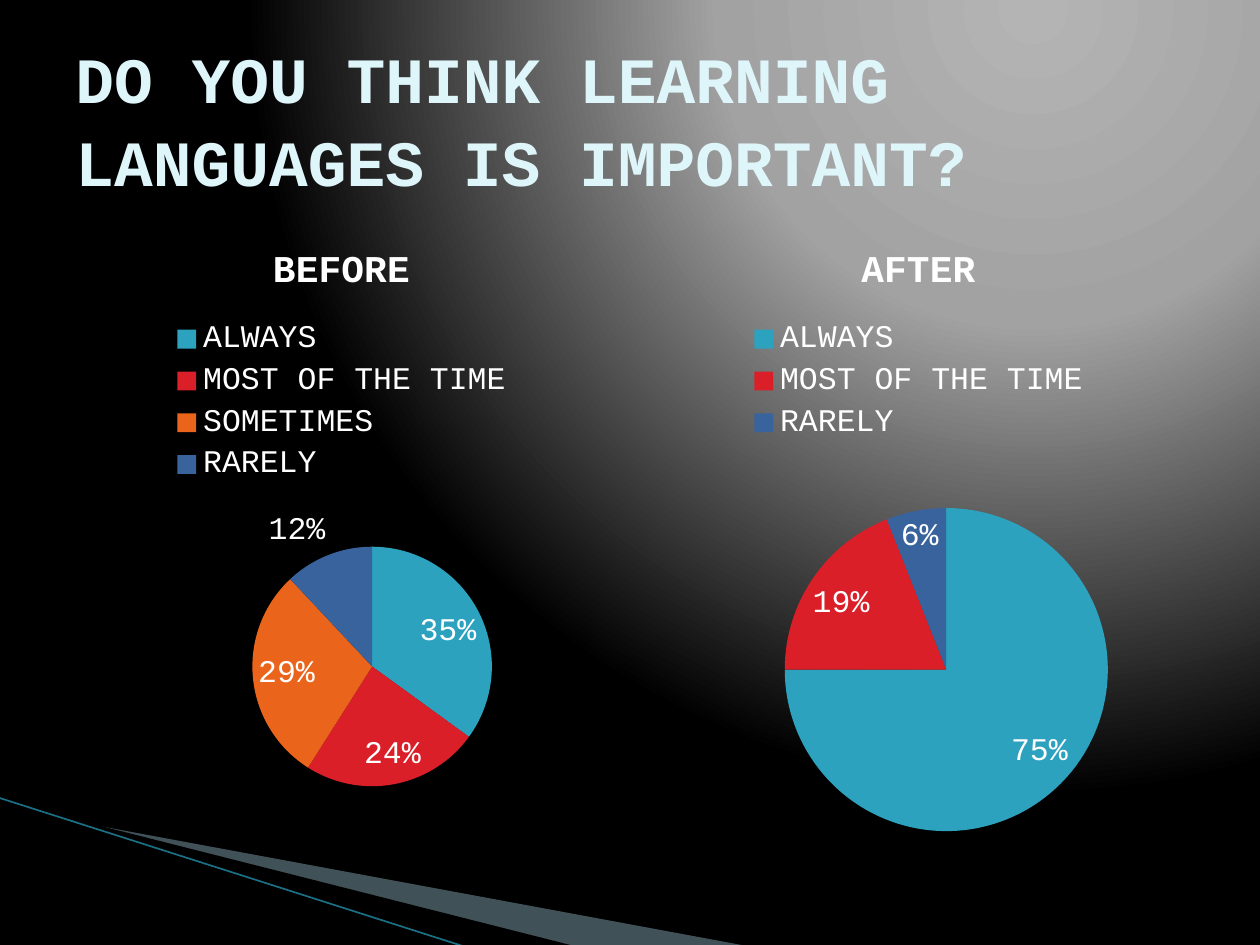
from lxml import etree
from pptx import Presentation
from pptx.chart.data import CategoryChartData
from pptx.dml.color import RGBColor
from pptx.enum import chart as charts, shapes, text
from pptx.oxml import ns
from pptx.util import Cm, Pt

COLORS = {
    "title": "DEF5FA", "text": "FFFFFF", "ribbon": "A0CBDC", "black": "000000",
    "line": "1C7085", "glow": "B4B4B4", "haze": "A2A2A2",
    "ALWAYS": "2DA2BF", "MOST OF THE TIME": "DA1F28",
    "SOMETIMES": "EB641B", "RARELY": "39639D",
}
FONT = "Courier New"
ANSWERS = ["ALWAYS", "MOST OF THE TIME", "SOMETIMES", "RARELY"]


def add_xml(parent, tag, **attributes):
    child = etree.SubElement(parent, ns.qn(tag))
    for name, value in attributes.items():
        child.set(name, str(value))
    return child


def set_font(font, size, color, bold=False):
    font.name = FONT
    font.size = Pt(size)
    font.bold = bold
    font.color.rgb = RGBColor.from_string(COLORS[color])


presentation = Presentation()
presentation.slide_width = Cm(25.4)
presentation.slide_height = Cm(19.05)
slide = presentation.slides.add_slide(presentation.slide_layouts[6])

slide.background.fill.gradient()
gradient = next(slide.element.iter(ns.qn("a:gradFill")))
for child in list(gradient):
    gradient.remove(child)
stops = add_xml(gradient, "a:gsLst")
for position, color in [(0, "glow"), (40, "haze"), (100, "black")]:
    stop = add_xml(stops, "a:gs", pos=position * 1000)
    add_xml(stop, "a:srgbClr", val=COLORS[color])
circle = add_xml(gradient, "a:path", path="circle")
add_xml(circle, "a:fillToRect", l=65000, t=0, r=0, b=98000)

ribbons = [
    ("ribbon", 40, [(1.4, 16.54), (15.11, 19.08), (11.58, 19.08), (1.4, 16.51)]),
    ("black", 100, [(1.35, 16.48), (11.61, 19.08), (9.45, 19.1), (1.37, 16.51)]),
]
for color, opacity, corners in ribbons:
    points = [(Cm(x), Cm(y)) for x, y in corners]
    builder = slide.shapes.build_freeform(*points[0])
    builder.add_line_segments(points[1:], close=True)
    shape = builder.convert_to_shape()
    shape.shadow.inherit = False
    shape.line.fill.background()
    shape.fill.solid()
    shape.fill.fore_color.rgb = RGBColor.from_string(COLORS[color])
    if opacity < 100:
        fill_color = next(shape.element.spPr.iter(ns.qn("a:srgbClr")))
        add_xml(fill_color, "a:alpha", val=opacity * 1000)

line = slide.shapes.add_connector(
    shapes.MSO_CONNECTOR.STRAIGHT, Cm(-0.03), Cm(16.08), Cm(9.42), Cm(19.1))
line.line.color.rgb = RGBColor.from_string(COLORS["line"])
line.line.width = Pt(0.95)
add_xml(line.element.spPr, "a:effectLst")

title = slide.shapes.add_textbox(Cm(1.27), Cm(0.76), Cm(22.86), Cm(3.18))
title.text_frame.word_wrap = True
title.text_frame.vertical_anchor = text.MSO_ANCHOR.MIDDLE
paragraph = title.text_frame.paragraphs[0]
paragraph.text = "DO YOU THINK LEARNING LANGUAGES IS IMPORTANT?"
paragraph.line_spacing = 1.07
set_font(paragraph.font, 36.9, "title", bold=True)

surveys = [
    ("AFTER", 12.9, [75, 19, None, 6], (0.26, 0.46, 0.58, 0.52)),
    ("BEFORE", 1.27, [35, 24, 29, 12], (0.34, 0.52, 0.43, 0.39)),
]
for name, left, values, pie_area in surveys:
    data = CategoryChartData()
    data.categories = ANSWERS
    data.add_series("Series 1", values)
    chart = slide.shapes.add_chart(
        charts.XL_CHART_TYPE.PIE, Cm(left), Cm(4.45), Cm(11.23), Cm(12.57), data).chart
    set_font(chart.font, 18, "text")

    chart.has_title = True
    chart.chart_title.include_in_layout = False
    heading = chart.chart_title.text_frame.paragraphs[0]
    heading.text = name
    set_font(heading.font, 21.6, "text", bold=True)

    chart.has_legend = True
    chart.legend.position = charts.XL_LEGEND_POSITION.TOP
    chart.legend.include_in_layout = False
    set_font(chart.legend.font, 18, "text")

    plot = chart.plots[0]
    plot.vary_by_categories = True
    plot.has_data_labels = True
    labels = plot.data_labels
    labels.show_percentage = True
    labels.show_value = False
    labels.number_format = "0%"
    labels.number_format_is_linked = False
    labels.position = charts.XL_LABEL_POSITION.BEST_FIT
    set_font(labels.font, 18, "text")

    for index, (answer, value) in enumerate(zip(ANSWERS, values)):
        fill = plot.series[0].points[index].format.fill
        fill.solid()
        fill.fore_color.rgb = RGBColor.from_string(COLORS[answer])
        if value is None:
            legend = next(chart.element.iter(ns.qn("c:legend")))
            entry = add_xml(legend, "c:legendEntry")
            add_xml(entry, "c:idx", val=index)
            add_xml(entry, "c:delete", val=1)
            legend.insert(1, entry)

    plot_area = next(chart.element.iter(ns.qn("c:plotArea")))
    for old_layout in plot_area.findall(ns.qn("c:layout")):
        plot_area.remove(old_layout)
    layout = add_xml(plot_area, "c:layout")
    plot_area.insert(0, layout)
    manual = add_xml(layout, "c:manualLayout")
    add_xml(manual, "c:layoutTarget", val="inner")
    for mode in ("xMode", "yMode"):
        add_xml(manual, f"c:{mode}", val="edge")
    for side, share in zip("xywh", pie_area):
        add_xml(manual, f"c:{side}", val=share)

presentation.save("out.pptx")
